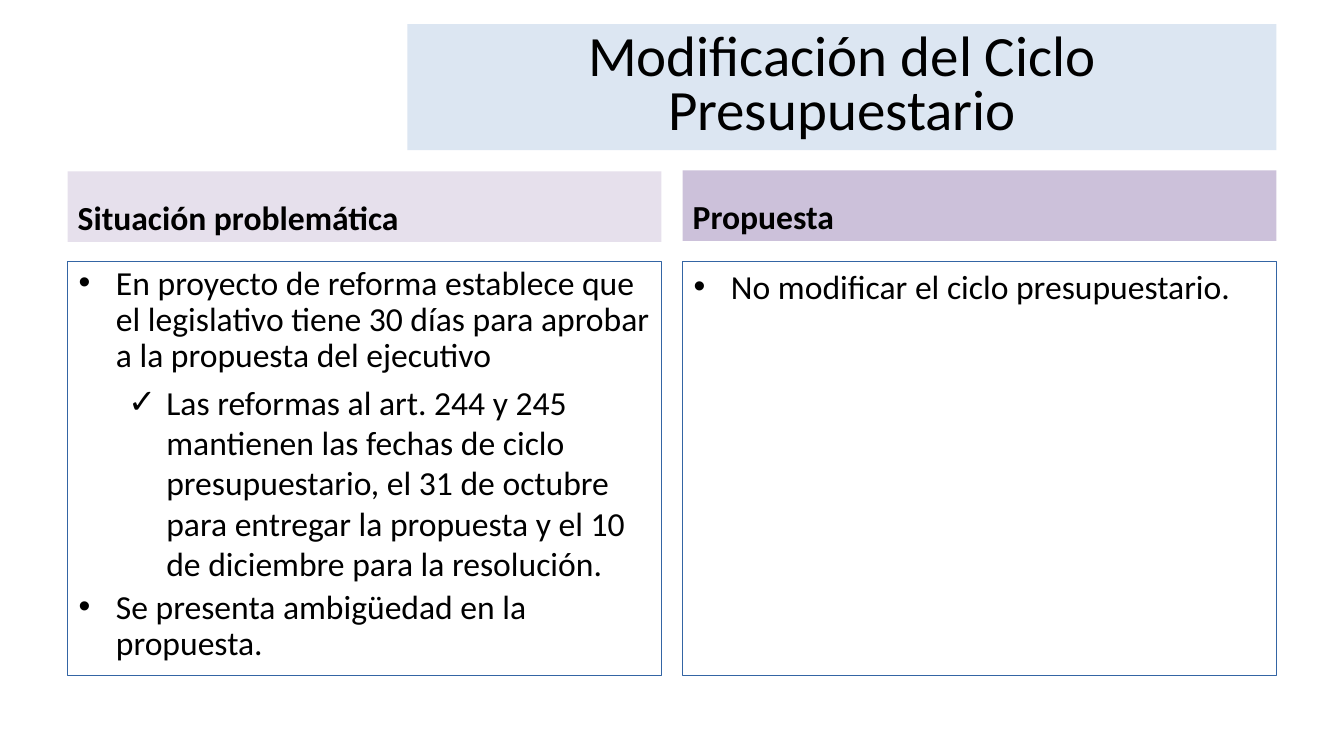
from dataclasses import dataclass

from lxml.etree import SubElement
from pptx import Presentation
from pptx.dml.color import RGBColor
from pptx.enum.text import MSO_ANCHOR, MSO_AUTO_SIZE, PP_ALIGN
from pptx.oxml.ns import qn
from pptx.util import Pt

PX = 9144  # EMU per px, 100 px to the inch


@dataclass(frozen=True)
class Theme:
    font: str = "Calibri"
    text: str = "000000"
    title_fill: str = "DCE6F2"
    problem_fill: str = "E6E0EC"
    proposal_fill: str = "CCC1DA"
    border: str = "3465A4"
    title_size: float = 40.7
    body_size: float = 24
    border_width: float = 0.75
    paragraph_gap: float = 4.8


@dataclass(frozen=True)
class Bullet:
    level: int
    char: str
    left: int
    hanging: int
    line_spacing: float


POINT = Bullet(0, "•", 38, 37, 0.9)
LOOSE_POINT = Bullet(0, "•", 38, 37, 1.0)
CHECK = Bullet(1, "✓", 88, 38, 1.0)


class SlideBuilder:
    def __init__(self, slide, theme):
        self.slide = slide
        self.theme = theme

    def place(self, index, box, anchor):
        holder = self.slide.placeholders[index]
        holder.left, holder.top, holder.width, holder.height = (n * PX for n in box)
        frame = holder.text_frame
        frame.word_wrap = True
        frame.auto_size = MSO_AUTO_SIZE.NONE
        frame.vertical_anchor = anchor
        return holder

    def fill(self, holder, color):
        holder.fill.solid()
        holder.fill.fore_color.rgb = RGBColor.from_string(color)

    def style(self, paragraph, size, bold=False):
        font = paragraph.font
        font.name = self.theme.font
        font.size = Pt(size)
        font.bold = bold
        font.color.rgb = RGBColor.from_string(self.theme.text)

    def title(self, text, box):
        holder = self.place(0, box, MSO_ANCHOR.MIDDLE)
        self.fill(holder, self.theme.title_fill)
        holder.text_frame.text = text
        heading = holder.text_frame.paragraphs[0]
        heading.alignment = PP_ALIGN.CENTER
        heading.line_spacing = 0.8
        self.style(heading, self.theme.title_size)

    def header(self, index, text, box, color):
        holder = self.place(index, box, MSO_ANCHOR.BOTTOM)
        self.fill(holder, color)
        holder.text_frame.text = text
        heading = holder.text_frame.paragraphs[0]
        heading.space_before = Pt(0)
        self.style(heading, self.theme.body_size, bold=True)

    def bullet(self, paragraph, kind):
        paragraph.level = kind.level
        properties = paragraph._p.get_or_add_pPr()
        properties.set("marL", str(kind.left * PX))
        properties.set("indent", str(-kind.hanging * PX))
        color = SubElement(properties, qn("a:buClr"))
        SubElement(color, qn("a:srgbClr"), val=self.theme.text)
        SubElement(properties, qn("a:buChar"), char=kind.char)
        paragraph.line_spacing = kind.line_spacing

    def bullet_list(self, index, items, box):
        holder = self.place(index, box, MSO_ANCHOR.TOP)
        holder.line.color.rgb = RGBColor.from_string(self.theme.border)
        holder.line.width = Pt(self.theme.border_width)
        frame = holder.text_frame
        for number, (kind, text) in enumerate(items):
            item = frame.add_paragraph() if number else frame.paragraphs[0]
            item.text = text
            self.bullet(item, kind)
            item.space_before = Pt(self.theme.paragraph_gap if number else 0)
            self.style(item, self.theme.body_size)


def main():
    deck = Presentation()
    deck.slide_width, deck.slide_height = 1333 * PX, 750 * PX
    theme = Theme()
    comparison = deck.slide_layouts[4]
    builder = SlideBuilder(deck.slides.add_slide(comparison), theme)

    # Title band
    builder.title("Modificación del Ciclo Presupuestario", (404, 24, 862, 125))

    # Two columns: left, header top, header fill, header, list items
    columns = [
        (67, 170, theme.problem_fill, "Situación problemática", [
            (POINT, "En proyecto de reforma establece que el legislativo tiene "
                    "30 días para aprobar a la propuesta del ejecutivo"),
            (CHECK, "Las reformas al art. 244 y 245 mantienen las fechas de ciclo "
                    "presupuestario, el 31 de octubre para entregar la propuesta "
                    "y el 10 de diciembre para la resolución."),
            (POINT, "Se presenta ambigüedad en la propuesta."),
        ]),
        (677, 169, theme.proposal_fill, "Propuesta", [
            (LOOSE_POINT, "No modificar el ciclo presupuestario."),
        ]),
    ]
    for column, (left, top, color, heading, items) in enumerate(columns):
        index = 1 + 2 * column
        builder.header(index, heading, (left, top, 589, 70), color)
        builder.bullet_list(index + 1, items, (left, 259, 589, 411))

    deck.save("out.pptx")


if __name__ == "__main__":
    main()
